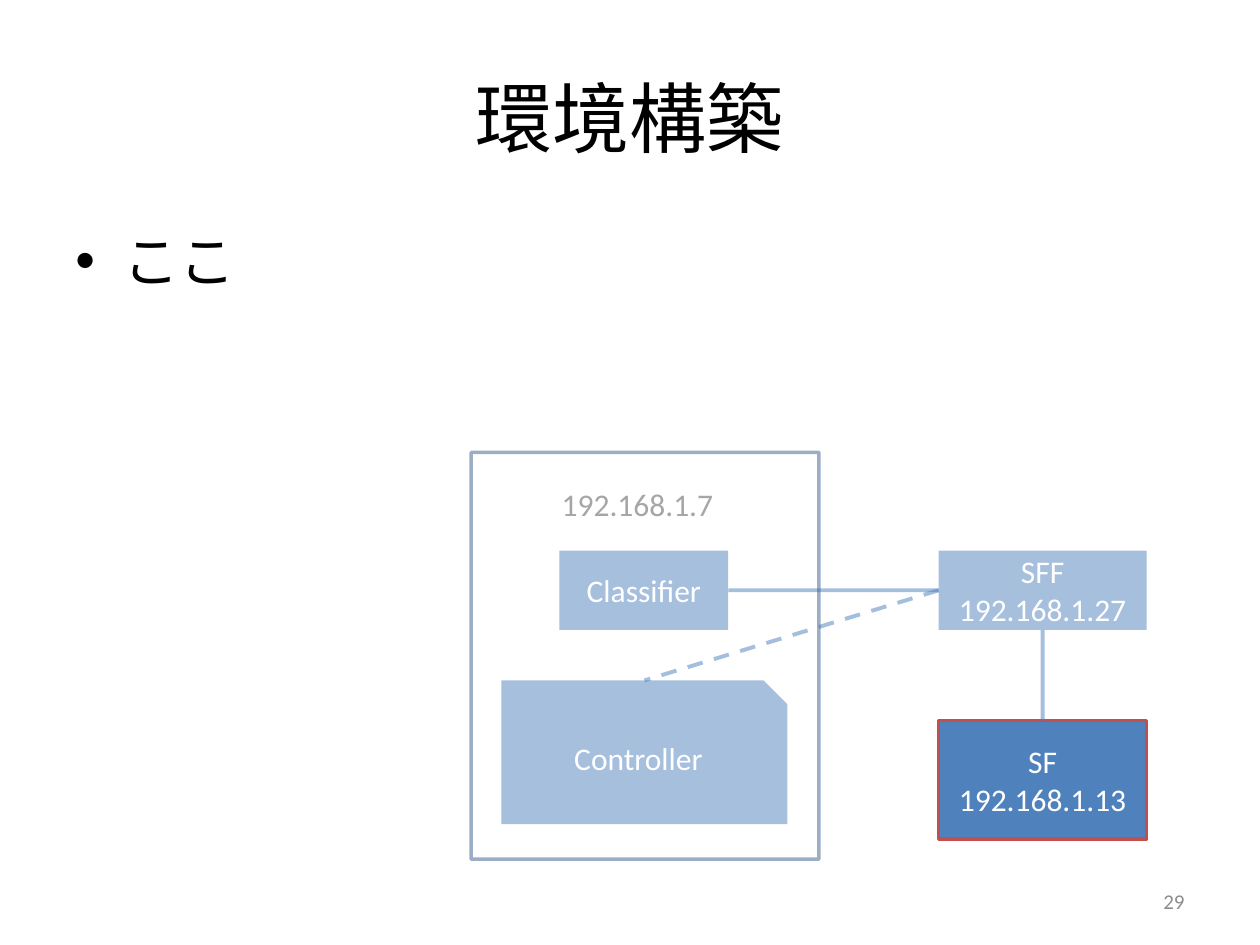
from lxml.etree import SubElement
from pptx import Presentation
from pptx.dml.color import RGBColor
from pptx.enum.dml import MSO_LINE as Dash
from pptx.enum.shapes import MSO_CONNECTOR as Link, MSO_SHAPE as Preset
from pptx.enum.text import MSO_ANCHOR as Anchor, MSO_AUTO_SIZE as AutoSize, PP_ALIGN as Align
from pptx.oxml.ns import qn
from pptx.util import Inches, Pt

FONT = "Calibri"
BLUE, RED, WHITE, BLACK = "4F81BD", "C0504D", "FFFFFF", "000000"
TOP, LEFT, BOTTOM, RIGHT = range(4)

TEXTS = {
    "title": ("環境構築", (0.5, 0.3, 9, 1.25), 44, BLACK, Align.CENTER, Anchor.MIDDLE),
    "body": ("ここ", (0.5, 1.75, 9, 4.95), 32, BLACK, Align.LEFT, Anchor.TOP),
    "number": ("29", (7.17, 6.95, 2.33, 0.4), 12, "8C8C8C", Align.RIGHT, Anchor.MIDDLE),
}
HOST = ("192.168.1.7", (4.36, 3.8, 1.42, 0.4), 18, "A6A6A6", Align.LEFT, Anchor.TOP)
NODES = [
    ("SF", ["SF", "192.168.1.13"], Preset.RECTANGLE, (7.45, 5.72, 1.65, 0.94), 100, RED),
    ("SFF", ["SFF", "192.168.1.27"], Preset.RECTANGLE, (7.45, 4.37, 1.65, 0.63), 50, None),
    ("Classifier", ["Classifier"], Preset.RECTANGLE, (4.44, 4.37, 1.34, 0.63), 50, None),
    ("Controller", ["Controller"], Preset.SNIP_1_RECTANGLE, (3.98, 5.4, 2.27, 1.14), 50, None),
]
LINKS = [
    ("Classifier", RIGHT, "SFF", LEFT, Dash.SOLID),
    ("SFF", BOTTOM, "SF", TOP, Dash.SOLID),
    ("SFF", LEFT, "Controller", TOP, Dash.DASH),
]
HOST_FRAME = (3.74, 3.59, 2.76, 3.23)


def paint(fill, color, opacity=100):
    fill.solid()
    fill.fore_color.rgb = RGBColor.from_string(color)
    if opacity < 100:
        tint = fill._xPr.find(qn("a:solidFill"))[0]
        SubElement(tint, qn("a:alpha"), val=str(opacity * 1000))


def draw_line(line, color, width, opacity=100):
    paint(line.fill, color, opacity)
    line.width = Pt(width)


def write(frame, lines, size, color, align, anchor):
    frame.word_wrap = True
    frame.vertical_anchor = anchor
    for index, text in enumerate(lines):
        para = frame.add_paragraph() if index else frame.paragraphs[0]
        para.alignment = align
        span = para.add_run()
        span.text = text
        span.font.name = FONT
        span.font.size = Pt(size)
        paint(span.font.fill, color)


def add_text(page, text, place, *style):
    box = page.shapes.add_textbox(*map(Inches, place))
    write(box.text_frame, [text], *style)
    return box.text_frame


def add_bullet(para):
    para.space_before = Pt(6.4)
    props = para._p.get_or_add_pPr()
    props.set("marL", str(Inches(0.38)))
    props.set("indent", str(Inches(-0.38)))
    SubElement(props, qn("a:buFont"), typeface="Arial")
    SubElement(props, qn("a:buChar"), char="•")


def add_shape(page, preset, place):
    shape = page.shapes.add_shape(preset, *map(Inches, place))
    shape.shadow.inherit = False
    return shape


def add_node(page, lines, preset, place, opacity, outline):
    node = add_shape(page, preset, place)
    paint(node.fill, BLUE, opacity)
    if outline:
        draw_line(node.line, outline, 2)
    else:
        node.line.fill.background()
    write(node.text_frame, lines, 18, WHITE, Align.CENTER, Anchor.MIDDLE)
    return node


def add_link(page, start, start_site, end, end_site, dash):
    link = page.shapes.add_connector(Link.STRAIGHT, 0, 0, 0, 0)
    link.begin_connect(start, start_site)
    link.end_connect(end, end_site)
    draw_line(link.line, "4B7EBC", 2.25, 50)
    link.line.dash_style = dash
    SubElement(link._element.spPr, qn("a:effectLst"))


def main():
    deck = Presentation()
    deck.slide_width, deck.slide_height = Inches(10), Inches(7.5)
    page = deck.slides.add_slide(deck.slide_layouts[6])

    frames = {name: add_text(page, *spec) for name, spec in TEXTS.items()}
    add_bullet(frames["body"].paragraphs[0])

    nodes = {name: add_node(page, *spec) for name, *spec in NODES}
    for start, start_site, end, end_site, dash in LINKS:
        add_link(page, nodes[start], start_site, nodes[end], end_site, dash)

    host = add_shape(page, Preset.RECTANGLE, HOST_FRAME)
    host.fill.background()
    draw_line(host.line, "3A5F8C", 2, 50)
    label = add_text(page, *HOST)
    label.word_wrap = False
    label.auto_size = AutoSize.SHAPE_TO_FIT_TEXT

    deck.save("out.pptx")


if __name__ == "__main__":
    main()
